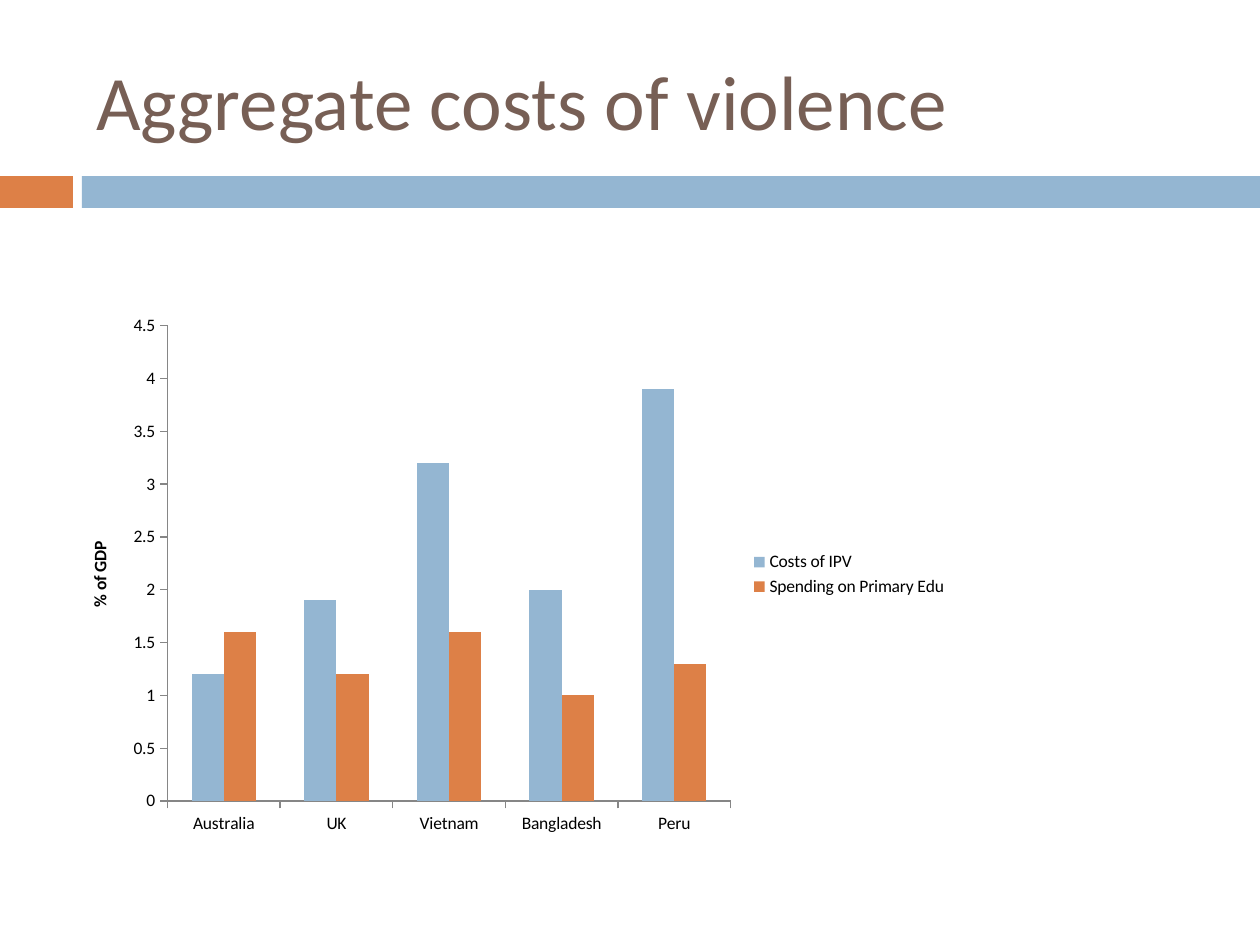
from pptx import Presentation
from pptx.chart.data import CategoryChartData
from pptx.dml.color import RGBColor
from pptx.enum.chart import XL_CHART_TYPE, XL_LEGEND_POSITION, XL_TICK_MARK
from pptx.enum.shapes import MSO_SHAPE
from pptx.enum.text import MSO_ANCHOR
from pptx.util import Pt

PX = 914400 // 126
BLUE = RGBColor(0x94, 0xB6, 0xD2)
ORANGE = RGBColor(0xDD, 0x80, 0x47)
BROWN = RGBColor(0x77, 0x5F, 0x55)
BLACK = RGBColor(0, 0, 0)
GREY = RGBColor(0x86, 0x86, 0x86)
FONT = "Calibri"
RECTANGLE = MSO_SHAPE.RECTANGLE
COLUMNS = XL_CHART_TYPE.COLUMN_CLUSTERED
RIGHT = XL_LEGEND_POSITION.RIGHT
OUTSIDE = XL_TICK_MARK.OUTSIDE
NO_TICKS = XL_TICK_MARK.NONE
MIDDLE = MSO_ANCHOR.MIDDLE


def area(left, top, width, height):
    return [length * PX for length in (left, top, width, height)]


def style(font, size, color, bold=False):
    for name, value in {"name": FONT, "size": Pt(size), "bold": bold}.items():
        setattr(font, name, value)
    font.color.rgb = color


deck = Presentation()
deck.slide_width, deck.slide_height = 1260 * PX, 945 * PX
page = deck.slides.add_slide(deck.slide_layouts[6])

# Band under the title
for left, width, color in ((0, 73, ORANGE), (82, 1178, BLUE)):
    band = page.shapes.add_shape(RECTANGLE, *area(left, 176, width, 32))
    band.shadow.inherit = False
    band.fill.solid()
    band.fill.fore_color.rgb = color
    band.line.fill.background()

# Title
title = page.shapes.add_textbox(*area(84, 32, 1124, 136)).text_frame
title.word_wrap = True
title.vertical_anchor = MIDDLE
span = title.paragraphs[0].add_run()
span.text = "Aggregate costs of violence"
style(span.font, 44, BROWN)

# Chart data
SERIES = (
    ("Costs of IPV", (1.2, 1.9, 3.2, 2, 3.9), BLUE),
    ("Spending on Primary Edu", (1.6, 1.2, 1.6, 1, 1.3), ORANGE),
)
data = CategoryChartData()
data.categories = ["Australia", "UK", "Vietnam", "Bangladesh", "Peru"]
for name, values, color in SERIES:
    data.add_series(name, values)

# Column chart
chart = page.shapes.add_chart(COLUMNS, *area(63, 305, 897, 539), data).chart
style(chart.font, 10, BLACK)
chart.has_title = False
chart.has_legend = True
chart.legend.position = RIGHT
chart.legend.include_in_layout = False
plot = chart.plots[0]
plot.vary_by_categories = False
plot.gap_width = 150
plot.overlap = 0
for series, (name, values, color) in zip(plot.series, SERIES):
    series.format.fill.solid()
    series.format.fill.fore_color.rgb = color

# Axes
for axis in (chart.category_axis, chart.value_axis):
    axis.has_major_gridlines = False
    axis.major_tick_mark = OUTSIDE
    axis.minor_tick_mark = NO_TICKS
    axis.format.line.color.rgb = GREY
    axis.format.line.width = Pt(0.75)
value_axis = chart.value_axis
value_axis.minimum_scale = 0
value_axis.maximum_scale = 4.5
value_axis.major_unit = 0.5
value_axis.tick_labels.number_format = "General"
value_axis.tick_labels.number_format_is_linked = False
axis_title = value_axis.axis_title.text_frame
axis_title.text = "% of GDP"
style(axis_title.paragraphs[0].runs[0].font, 10, BLACK, bold=True)

deck.save("out.pptx")
